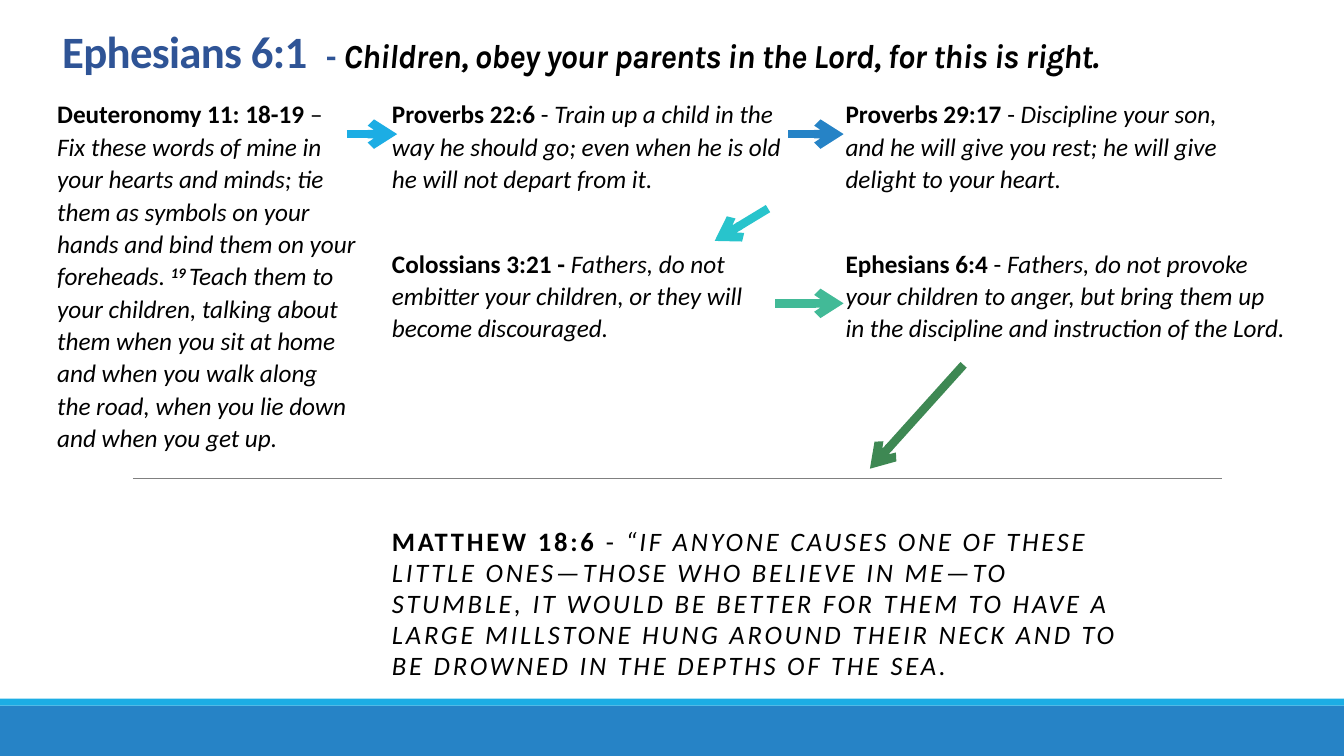
from lxml import etree
from pptx import Presentation
from pptx.dml.color import RGBColor
from pptx.enum.shapes import MSO_CONNECTOR, MSO_SHAPE
from pptx.enum.text import MSO_ANCHOR, MSO_AUTO_SIZE
from pptx.oxml.ns import qn
from pptx.util import Pt

COLORS = {
    "black": "000000", "title": "2F5496", "rule": "808080",
    "sky": "1CADE4", "blue": "2683C6", "cyan": "28C4CC",
    "teal": "42BA97", "green": "3E8853",
}

prs = Presentation()
prs.slide_width, prs.slide_height = Pt(960), Pt(540)
s = prs.slides.add_slide(prs.slide_layouts[6])


def add_text(box, paragraphs, spacing, size=18, tracking=0):
    """Add a text box; each run is (text, style, overrides), style using b, i and ^."""
    tf = s.shapes.add_textbox(*map(Pt, box)).text_frame
    tf.word_wrap = True
    for n, runs in enumerate(paragraphs):
        p = tf.paragraphs[0] if n == 0 else tf.add_paragraph()
        p.line_spacing = spacing
        for text, style, *extra in runs:
            look = extra[0] if extra else {}
            r = p.add_run()
            r.text = text
            r.font.name = look.get("font", "Calibri")
            r.font.size = Pt(look.get("size", size))
            r.font.bold, r.font.italic = "b" in style, "i" in style
            r.font.color.rgb = RGBColor.from_string(COLORS[look.get("color", "black")])
            if tracking:
                r.font._element.set("spc", str(int(tracking * 100)))
            if "^" in style:
                r.font._element.set("baseline", "30000")
    return tf


def add_line(x1, y1, x2, y2, color, width, arrow=False):
    line = s.shapes.add_connector(MSO_CONNECTOR.STRAIGHT, *map(Pt, (x1, y1, x2, y2)))
    line.line.color.rgb = RGBColor.from_string(COLORS[color])
    line.line.width = Pt(width)
    if arrow:
        etree.SubElement(line.line._get_or_add_ln(), qn("a:tailEnd"), type="arrow")
    etree.SubElement(line._element.spPr, qn("a:effectLst"))


# Footer bands and divider
for top, height, color in [(504, 36, "blue"), (499, 5, "sky")]:
    band = s.shapes.add_shape(MSO_SHAPE.RECTANGLE, 0, Pt(top), prs.slide_width, Pt(height))
    band.shadow.inherit = False
    band.fill.solid()
    band.fill.fore_color.rgb = RGBColor.from_string(COLORS[color])
    band.line.fill.background()
add_line(95, 342, 872.6, 342, "rule", 0.5)

# Title
title = add_text((37.4, 17.3, 882.7, 43.2), [[
    ("Ephesians 6:1  ", "b", {"size": 32, "color": "title"}),
    ("- ", "b", {"color": "title"}),
    ("Children, obey your parents in the Lord, for this is right.", "bi", {"font": "Karla"}),
]], 0.85, size=24, tracking=-0.5)
title.vertical_anchor = MSO_ANCHOR.MIDDLE
title.margin_top = title.margin_bottom = 0

# Closing verse
add_text((272.9, 373, 543.6, 118.8), [[
    ("MATTHEW 18:6", "b"), (" - ", ""),
    ("“IF ANYONE CAUSES ONE OF THESE LITTLE ONES—THOSE WHO BELIEVE IN ME—TO STUMBLE, "
     "IT WOULD BE BETTER FOR THEM TO HAVE A LARGE MILLSTONE HUNG AROUND THEIR NECK "
     "AND TO BE DROWNED IN THE DEPTHS OF THE SEA.", "i"),
]], 0.97, size=19, tracking=2)

# Verses
LEFT, MIDDLE, RIGHT = 33.8, 272.9, 596.9
ROW1, ROW2 = 65.5, 172.1
verses = [
    (LEFT, ROW1, 228.2, 262.8, [
        [("Deuteronomy 11: 18-19", "b"), (" –", "")],
        [("Fix these words of mine in your hearts and minds; tie them as symbols on your "
          "hands and bind them on your foreheads. ", "i"),
         ("19 ", "bi^"),
         ("Teach them to your children, talking about them when you sit at home and when "
          "you walk along the road, when you lie down and when you get up.", "i")],
    ]),
    (MIDDLE, ROW1, 299.5, 76.3, [[
        ("Proverbs 22:6", "b"), (" - ", ""),
        ("Train up a child in the way he should go; even when he is old he will not "
         "depart from it.", "i")]]),
    (RIGHT, ROW1, 289.4, 76.3, [[
        ("Proverbs 29:17 ", "b"), ("- ", ""),
        ("Discipline your son, and he will give you rest; he will give delight to your "
         "heart.", "i")]]),
    (MIDDLE, ROW2, 274.3, 76.3, [[
        ("Colossians 3:21 - ", "b"),
        ("Fathers, do not embitter your children, or they will become discouraged.", "i")]]),
    (RIGHT, ROW2, 329.8, 76.3, [[
        ("Ephesians 6:4", "b"), (" - ", ""),
        ("Fathers, do not provoke your children to anger, but bring them up in the "
         "discipline and instruction of the Lord.", "i")]]),
]
for *box, paragraphs in verses:
    tf = add_text(box, paragraphs, 1.07)
    tf.auto_size = MSO_AUTO_SIZE.SHAPE_TO_FIT_TEXT

# Arrows in reading order
for x1, y1, x2, y2, color in [
    (247.7, 95.8, 283.7, 95.8, "sky"),
    (563, 95.8, 602.6, 95.8, "blue"),
    (548.6, 149, 510.5, 172.1, "cyan"),
    (553.7, 216.7, 602.6, 216.7, "teal"),
    (688.3, 260.6, 621.4, 334.8, "green"),
]:
    add_line(x1, y1, x2, y2, color, 6, arrow=True)

prs.save("out.pptx")
